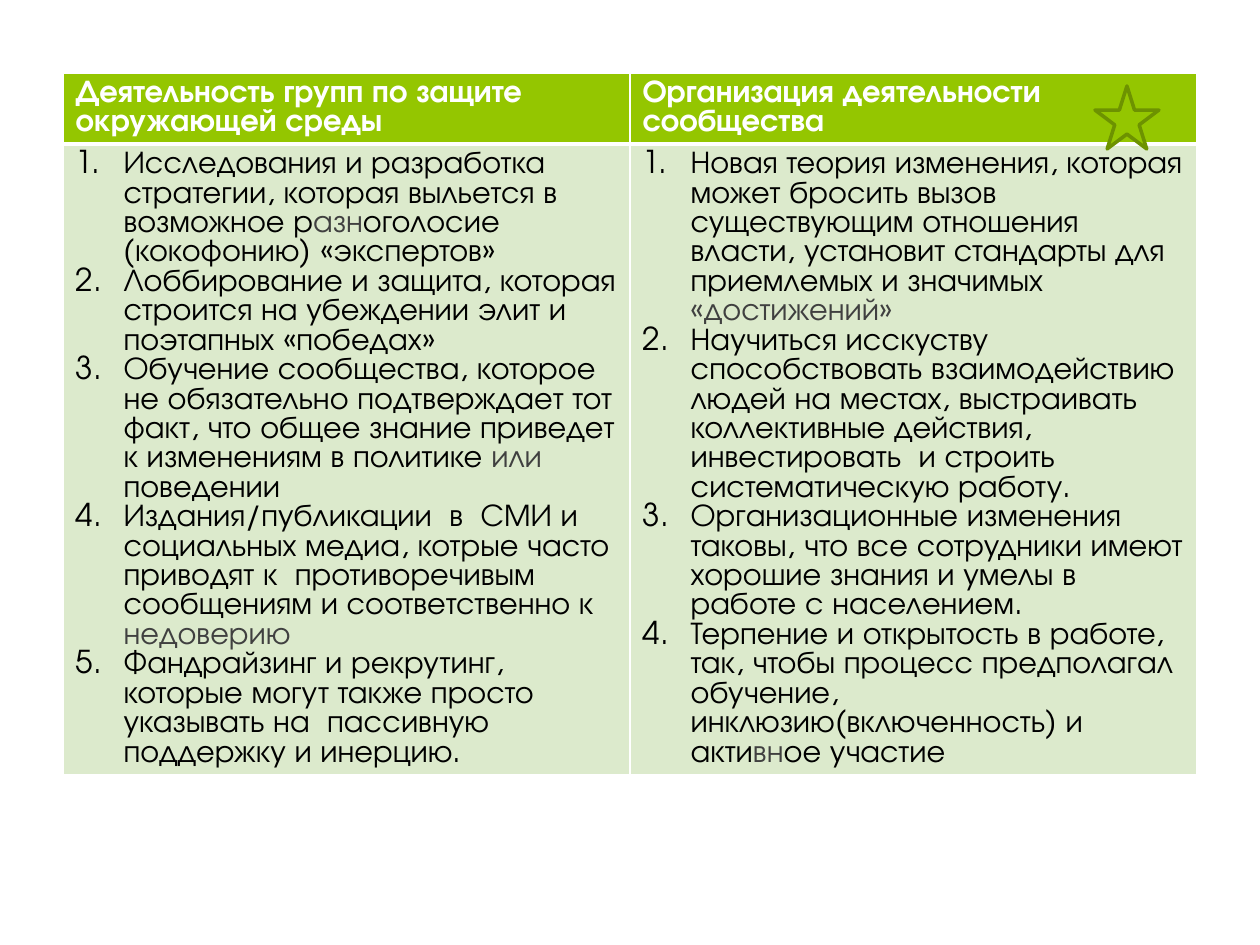
import pptx
import pptx.dml.color
import pptx.enum.shapes
import pptx.oxml
import pptx.oxml.ns
import pptx.util

DPI = 126
FONT = "TeX Gyre Adventor"
HUES = {
    "head": "94C600",
    "body": "DCEACC",
    "edge": "6D9200",
    "white": "FFFFFF",
    "black": "000000",
    "grey": "404040",
}

HEADS = [
    "Деятельность групп по защите окружающей среды",
    "Организация деятельности сообщества",
]

# Words between bars are grey
LISTS = [
    [
        "Исследования и разработка стратегии, которая выльется в возможное "
        "р|азн|оголосие (кокофонию) «экспертов»",
        "Лоббирование и защита, которая строится на убеждении элит и "
        "поэтапных «победах»",
        "Обучение сообщества, которое не обязательно подтверждает тот факт, "
        "что общее знание приведет к изменениям в политике |или |поведении",
        "Издания/публикации  в  СМИ и социальных медиа, котрые часто "
        "приводят к  противоречивым сообщениям и соответственно к |недоверию|",
        "Фандрайзинг и рекрутинг, которые могут также просто  указывать на  "
        "пассивную поддержку и инерцию.",
    ],
    [
        "Новая теория изменения, которая может бросить вызов существующим "
        "отношения власти, установит стандарты для приемлемых и значимых "
        "|«достижений»|",
        "Научиться исскуству способствовать взаимодействию людей на местах, "
        "выстраивать коллективные действия, инвестировать  и строить "
        "систематическую работу.",
        "Организационные изменения таковы, что все сотрудники имеют хорошие "
        "знания и умелы в работе с населением.",
        "Терпение и открытость в работе, так, чтобы процесс предполагал "
        "обучение, инклюзию(включенность) и акти|вн|ое участие",
    ],
]


def px(num):
    return pptx.util.Emu(round(num * 914400 / DPI))


def hue(name):
    return pptx.dml.color.RGBColor.from_string(HUES[name])


def paint(shape, name):
    shape.fill.solid()
    shape.fill.fore_color.rgb = hue(name)


def style(run, name, bold=False):
    run.font.name = FONT
    run.font.size = pptx.util.Pt(18)
    run.font.bold = bold
    run.font.color.rgb = hue(name)


def border(cell, top, base):
    """White cell edges; widths in points for top and base, 1 at the sides."""
    props = cell._tc.get_or_add_tcPr()
    for spot, (side, wide) in enumerate(zip("LRTB", (1, 1, top, base))):
        props.insert(spot, pptx.oxml.parse_xml(
            f'<a:ln{side} {pptx.oxml.ns.nsdecls("a")} w="{wide * 12700}">'
            f'<a:solidFill><a:srgbClr val="{HUES["white"]}"/></a:solidFill>'
            f'</a:ln{side}>'))


def number(para):
    props = para._p.get_or_add_pPr()
    props.set("marL", str(px(48)))
    props.set("indent", str(-px(48)))
    props.append(pptx.oxml.parse_xml(
        f'<a:buAutoNum {pptx.oxml.ns.nsdecls("a")} type="arabicPeriod"/>'))


def fill_head(cell, text):
    paint(cell, "head")
    border(cell, 1, 3)
    cell.text_frame.text = text
    style(cell.text_frame.paragraphs[0].runs[0], "white", bold=True)


def fill_list(cell, items):
    paint(cell, "body")
    border(cell, 3, 1)
    frame = cell.text_frame
    for spot, item in enumerate(items):
        para = frame.add_paragraph() if spot else frame.paragraphs[0]
        number(para)
        for turn, part in enumerate(item.split("|")):
            if part:
                run = para.add_run()
                run.text = part
                style(run, "grey" if turn % 2 else "black")


def add_grid(slide):
    grid = slide.shapes.add_table(
        2, 2, px(63), px(73), px(1134), px(701)).table
    grid.horz_banding = False
    for row, high in zip(grid.rows, (71, 630)):
        row.height = px(high)
    for col, (head, items) in enumerate(zip(HEADS, LISTS)):
        grid.columns[col].width = px(567)
        fill_head(grid.cell(0, col), head)
        fill_list(grid.cell(1, col), items)


def add_star(slide):
    star = slide.shapes.add_shape(
        pptx.enum.shapes.MSO_SHAPE.STAR_5_POINT,
        px(1095), px(86), px(64), px(63))
    star.shadow.inherit = False
    paint(star, "head")
    star.line.color.rgb = hue("edge")
    star.line.width = pptx.util.Pt(2)


def main():
    deck = pptx.Presentation()
    deck.slide_width, deck.slide_height = px(1260), px(945)
    slide = deck.slides.add_slide(deck.slide_layouts[6])
    # Comparison table, then the star over its header
    add_grid(slide)
    add_star(slide)
    deck.save("out.pptx")


if __name__ == "__main__":
    main()
